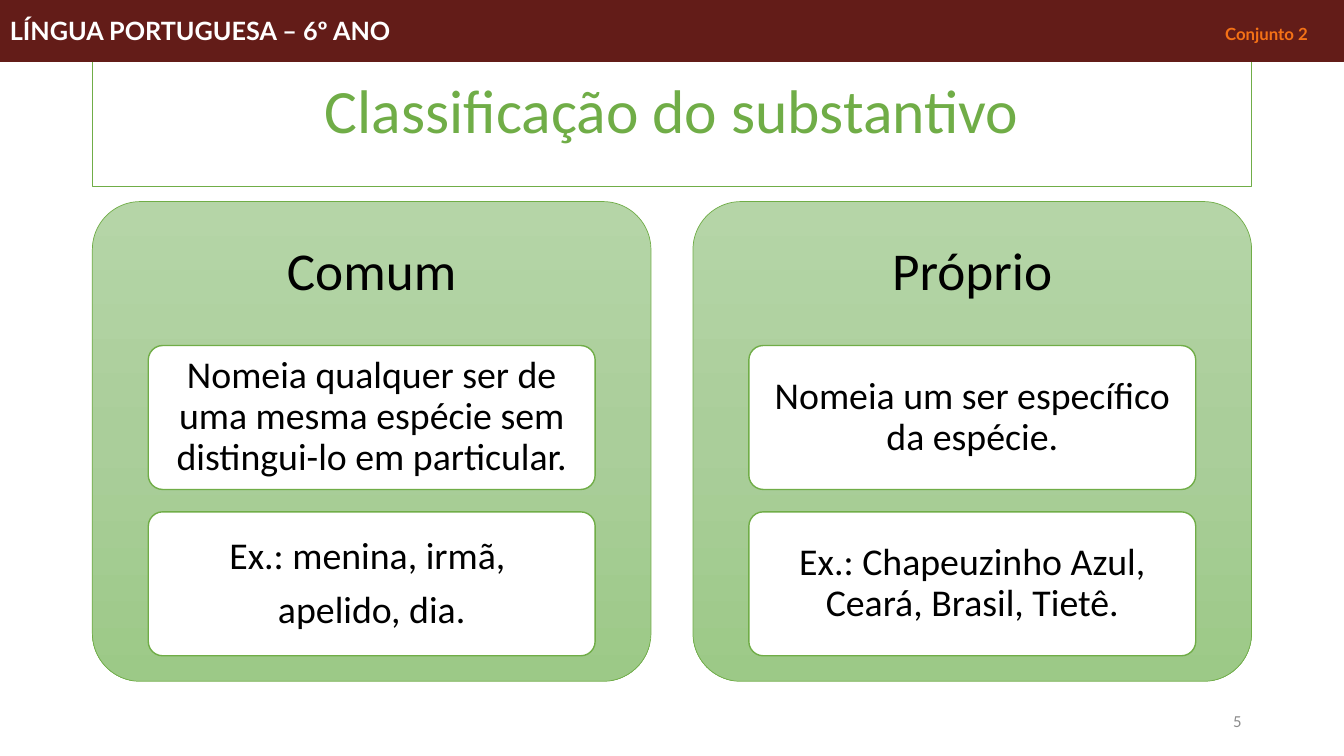
"""Build the slide on the classes of the Portuguese noun."""
from copy import deepcopy

from pptx import Presentation
from pptx.dml.color import RGBColor
from pptx.enum import shapes, text
from pptx.oxml import ns
from pptx.util import Pt
from lxml import etree

TITLE = "Classificação do substantivo"
SUBJECT = "LÍNGUA PORTUGUESA – 6º ANO"
UNIT = "Conjunto 2"
PAGE = "5"
CLASSES = [
    ("Comum", [
        ["Nomeia qualquer ser de uma mesma espécie sem distingui-lo em particular."],
        ["Ex.: menina, irmã, ", "apelido, dia."],
    ]),
    ("Próprio", [
        ["Nomeia um ser específico da espécie."],
        ["Ex.: Chapeuzinho Azul, Ceará, Brasil, Tietê."],
    ]),
]

GREEN = RGBColor(0x70, 0xAD, 0x47)
GRADIENT = [
    (0, RGBColor(0xB5, 0xD5, 0xA7)),
    (0.5, RGBColor(0xAA, 0xCE, 0x9A)),
    (1, RGBColor(0x9C, 0xC9, 0x87)),
]
MAROON = RGBColor(0x63, 0x1C, 0x18)
ORANGE = RGBColor(0xF4, 0x71, 0x16)
GREY = RGBColor(0x8C, 0x8C, 0x8C)
BLACK = RGBColor(0, 0, 0)
WHITE = RGBColor(255, 255, 255)

SLIDE_W, SLIDE_H = 960, 540
LEFT, CONTENT_W = 66, 828
PANEL_TOP, PANEL_W, PANEL_H = 144, 399, 342.7
PANEL_PITCH = CONTENT_W - PANEL_W
CARD_W, CARD_H = PANEL_W * 0.8, PANEL_H * 0.3
CARD_PITCH = 118.8
UNIT_TAB = 868


def add_run(paragraph, words, size, color, font="Calibri", bold=False):
    run = paragraph.add_run()
    run.text = words
    run.font.name, run.font.size, run.font.bold = font, Pt(size), bold
    run.font.color.rgb = color


def set_frame(part, inset_x, inset_y):
    frame = part.text_frame
    frame.word_wrap = True
    frame.vertical_anchor = text.MSO_ANCHOR.MIDDLE
    frame.margin_left = frame.margin_right = Pt(inset_x)
    frame.margin_top = frame.margin_bottom = Pt(inset_y)
    return frame


def write_centred(part, lines, size, inset_x, inset_y):
    frame = set_frame(part, inset_x, inset_y)
    for index, line in enumerate(lines):
        paragraph = frame.add_paragraph() if index else frame.paragraphs[0]
        paragraph.alignment = text.PP_ALIGN.CENTER
        paragraph.line_spacing = 0.9
        paragraph.space_after = Pt(size * 0.35)
        add_run(paragraph, line, size, BLACK)


def add_box(slide, kind, box, line_color, line_width):
    part = slide.shapes.add_shape(kind, *map(Pt, box))
    part.shadow.inherit = False
    part.line.color.rgb = line_color
    part.line.width = Pt(line_width)
    return part


def add_rounded(slide, box, line_width):
    part = add_box(slide, shapes.MSO_SHAPE.ROUNDED_RECTANGLE, box, GREEN, line_width)
    part.adjustments[0] = 0.1
    return part


def fill_gradient(panel):
    panel.fill.gradient()
    panel.fill.gradient_angle = 270
    stop_list = panel._element.spPr.find(".//" + ns.qn("a:gsLst"))
    stop_list.insert(1, deepcopy(stop_list[0]))
    for stop, (position, color) in zip(panel.fill.gradient_stops, GRADIENT):
        stop.position = position
        stop.color.rgb = color


def add_title(slide):
    title = slide.shapes.title
    title.left, title.top, title.width, title.height = map(Pt, (LEFT, 28.8, CONTENT_W, 104.4))
    title.line.color.rgb = GREEN
    title.line.width = Pt(0.75)
    paragraph = set_frame(title, 7.2, 3.6).paragraphs[0]
    paragraph.alignment = text.PP_ALIGN.CENTER
    paragraph.line_spacing = 0.9
    add_run(paragraph, TITLE, 44, GREEN)


def add_class(slide, left, name, cards):
    panel = add_rounded(slide, (left, PANEL_TOP, PANEL_W, PANEL_H), 0.5)
    fill_gradient(panel)
    heading = slide.shapes.add_textbox(*map(Pt, (left, PANEL_TOP, PANEL_W, CARD_H)))
    write_centred(heading, [name], 38, 11.5, 11.5)
    for row, lines in enumerate(cards):
        top = PANEL_TOP + CARD_H + row * CARD_PITCH
        card = add_rounded(slide, (left + PANEL_W / 10, top, CARD_W, CARD_H), 1)
        card.fill.solid()
        card.fill.fore_color.rgb = WHITE
        write_centred(card, lines, 27, 5, 4)


def add_header(slide):
    header = add_box(slide, shapes.MSO_SHAPE.RECTANGLE, (0, 0, SLIDE_W, 44), MAROON, 0.75)
    header.fill.solid()
    header.fill.fore_color.rgb = MAROON
    paragraph = set_frame(header, 7.2, 3.6).paragraphs[0]
    paragraph.alignment = text.PP_ALIGN.LEFT
    tabs = etree.SubElement(paragraph._p.get_or_add_pPr(), ns.qn("a:tabLst"))
    etree.SubElement(tabs, ns.qn("a:tab"), pos=str(Pt(UNIT_TAB)), algn="l")
    add_run(paragraph, SUBJECT + "\t", 18, WHITE, "Lato", True)
    add_run(paragraph, UNIT, 12, ORANGE, "Lato", True)


def add_page_number(slide):
    page = slide.shapes.add_textbox(*map(Pt, (678, 500.5, 216, 28.8)))
    paragraph = set_frame(page, 7.2, 3.6).paragraphs[0]
    paragraph.alignment = text.PP_ALIGN.RIGHT
    add_run(paragraph, PAGE, 12, GREY)


def main():
    deck = Presentation()
    deck.slide_width, deck.slide_height = Pt(SLIDE_W), Pt(SLIDE_H)
    slide = deck.slides.add_slide(deck.slide_layouts[5])
    add_title(slide)
    for column, (name, cards) in enumerate(CLASSES):
        add_class(slide, LEFT + column * PANEL_PITCH, name, cards)
    add_page_number(slide)
    add_header(slide)
    deck.save("out.pptx")


if __name__ == "__main__":
    main()
